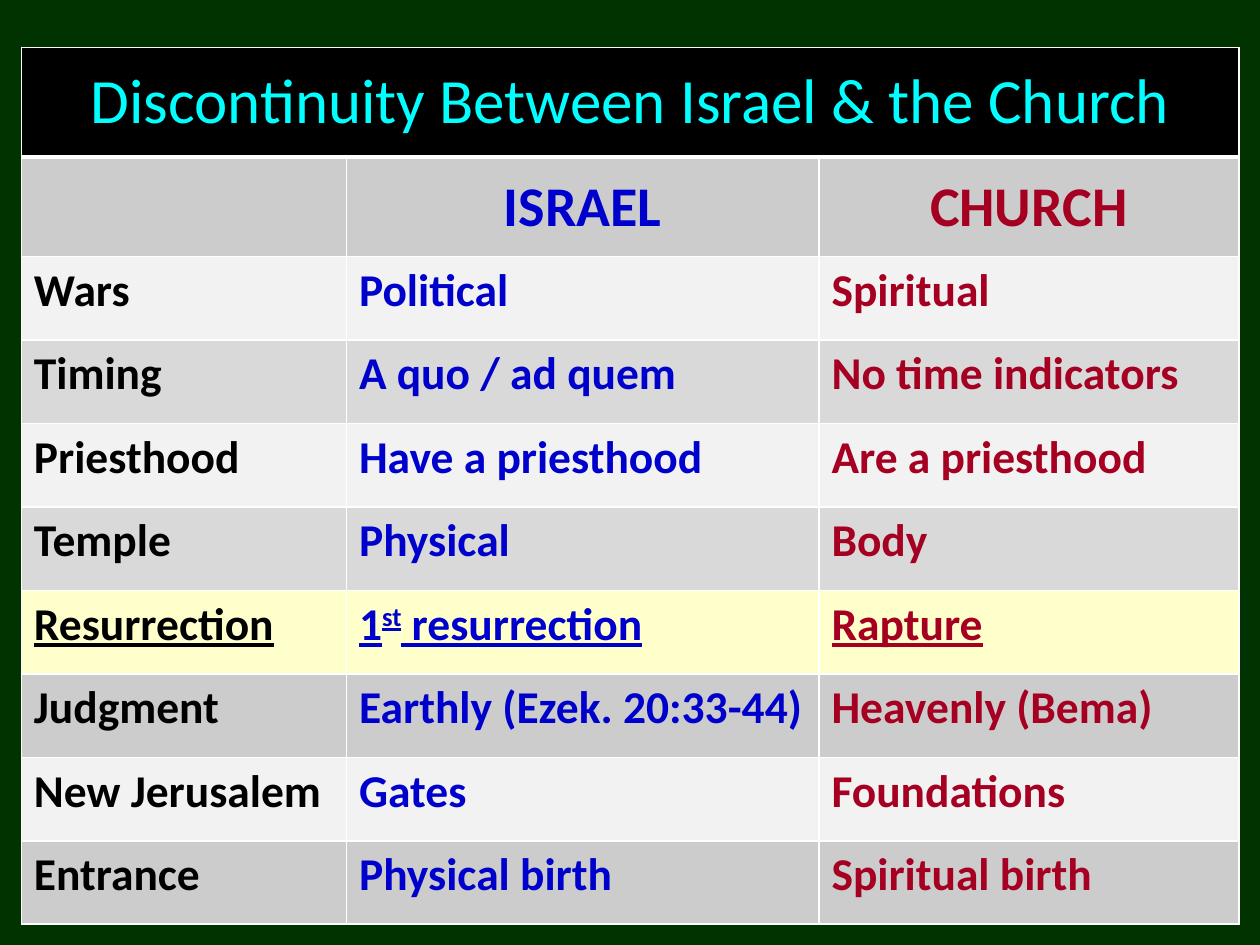
from dataclasses import dataclass

from lxml import etree
from pptx import Presentation
from pptx import util as u
from pptx.dml.color import RGBColor
from pptx.enum import text
from pptx.oxml import ns


@dataclass(frozen=True)
class Theme:
    font: str = "Calibri"
    page: str = "003300"
    border: str = "FFFFFF"
    title_fill: str = "000000"
    title: str = "00FFFF"
    gray: str = "CCCCCC"
    light: str = "F2F2F2"
    medium: str = "D9D9D9"
    highlight: str = "FFFFCC"
    columns: tuple[str, ...] = ("000000", "0000CC", "A50021")
    title_size: float = 36
    heading_size: float = 32
    body_size: float = 26


@dataclass(frozen=True)
class Row:
    texts: tuple[str, str, str]
    fill: str
    underline: bool = False


THEME = Theme()
TITLE = "Discontinuity Between Israel & the Church"
HEADINGS = ("", "ISRAEL", "CHURCH")
ROWS = (
    Row(("Wars", "Political", "Spiritual"), THEME.light),
    Row(("Timing", "A quo / ad quem", "No time indicators"), THEME.medium),
    Row(("Priesthood", "Have a priesthood", "Are a priesthood"), THEME.light),
    Row(("Temple", "Physical", "Body"), THEME.medium),
    Row(("Resurrection", "1^st^ resurrection", "Rapture"), THEME.highlight, True),
    Row(("Judgment", "Earthly (Ezek. 20:33-44)", "Heavenly (Bema)"), THEME.gray),
    Row(("New Jerusalem", "Gates", "Foundations"), THEME.light),
    Row(("Entrance", "Physical birth", "Spiritual birth"), THEME.gray),
)
LEFT, TOP = 12.2, 27.2
WIDTHS = (185.8, 270, 240)
HEIGHTS = (62.6, 56.9) + (47.7,) * len(ROWS)


def style_cell(cell, fill: str, bottom: float = 1) -> None:
    properties = cell._tc.get_or_add_tcPr()
    for side, width in (("L", 1), ("R", 1), ("T", 1), ("B", bottom)):
        line = etree.SubElement(properties, ns.qn(f"a:ln{side}"), w=str(u.Pt(width)))
        solid = etree.SubElement(line, ns.qn("a:solidFill"))
        etree.SubElement(solid, ns.qn("a:srgbClr"), val=THEME.border)
    cell.fill.solid()
    cell.fill.fore_color.rgb = RGBColor.from_string(fill)


def write_spans(para, words: str, color: str, formats: dict) -> None:
    for index, piece in enumerate(words.split("^")):
        span = para.add_run()
        span.text = piece
        for name, value in formats.items():
            setattr(span.font, name, value)
        span.font.color.rgb = RGBColor.from_string(color)
        if index % 2:
            span._r.get_or_add_rPr().set("baseline", "30000")


def write_heading(cell, words: str, color: str, size: float, bold: bool) -> None:
    cell.vertical_anchor = text.MSO_ANCHOR.MIDDLE
    para = cell.text_frame.paragraphs[0]
    para.alignment = text.PP_ALIGN.CENTER
    spacing = etree.SubElement(para._p.get_or_add_pPr(), ns.qn("a:spcBef"))
    etree.SubElement(spacing, ns.qn("a:spcPct"), val="20000")
    write_spans(para, words, color, {"name": THEME.font, "size": u.Pt(size), "bold": bold})


def write_body(cell, words: str, color: str, underline: bool) -> None:
    para = cell.text_frame.paragraphs[0]
    para.space_before = para.space_after = u.Pt(6)
    formats = {"name": THEME.font, "size": u.Pt(THEME.body_size),
               "bold": True, "underline": underline}
    write_spans(para, words, color, formats)


def add_comparison(page) -> None:
    table = page.shapes.add_table(
        len(HEIGHTS), len(WIDTHS), u.Pt(LEFT), u.Pt(TOP),
        u.Pt(sum(WIDTHS)), u.Pt(sum(HEIGHTS))).table
    table.first_row = table.horz_banding = False
    for column, width in zip(table.columns, WIDTHS):
        column.width = u.Pt(width)
    for row, height in zip(table.rows, HEIGHTS):
        row.height = u.Pt(height)

    table.cell(0, 0).merge(table.cell(0, 2))
    write_heading(table.cell(0, 0), TITLE, THEME.title, THEME.title_size, False)
    for column, (heading, color) in enumerate(zip(HEADINGS, THEME.columns)):
        style_cell(table.cell(0, column), THEME.title_fill, bottom=3)
        cell = table.cell(1, column)
        style_cell(cell, THEME.gray)
        if heading:
            write_heading(cell, heading, color, THEME.heading_size, True)
    for index, row in enumerate(ROWS, start=2):
        for column, (words, color) in enumerate(zip(row.texts, THEME.columns)):
            cell = table.cell(index, column)
            style_cell(cell, row.fill)
            write_body(cell, words, color, row.underline)


def main() -> None:
    deck = Presentation()
    deck.slide_width, deck.slide_height = u.Pt(720), u.Pt(540)
    page = deck.slides.add_slide(deck.slide_layouts[6])
    page.background.fill.solid()
    page.background.fill.fore_color.rgb = RGBColor.from_string(THEME.page)
    add_comparison(page)
    deck.save("out.pptx")


if __name__ == "__main__":
    main()
